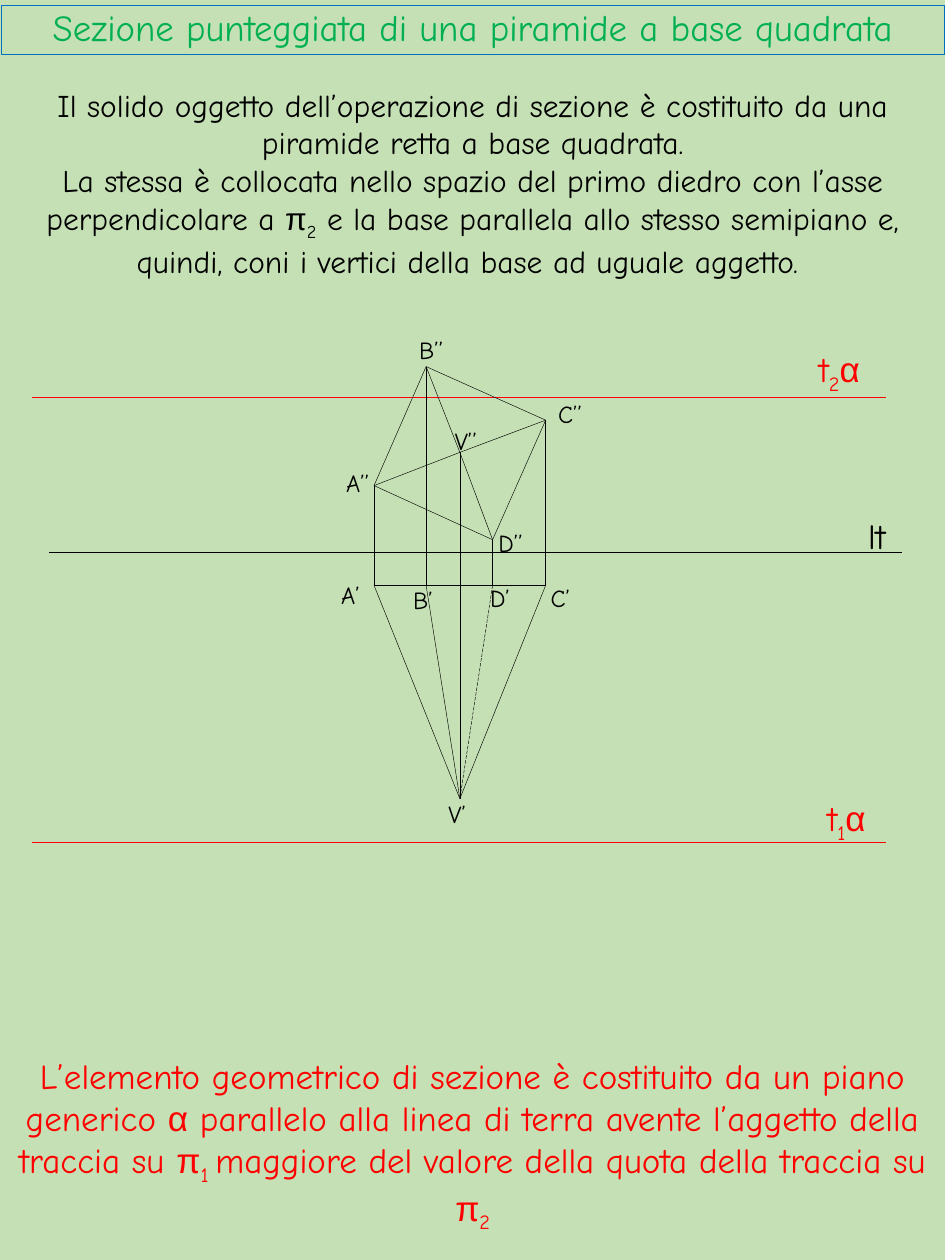
from lxml.etree import SubElement
from pptx import Presentation
from pptx.dml.color import RGBColor
from pptx.enum.dml import MSO_LINE_DASH_STYLE as Dash
from pptx.enum.shapes import MSO_CONNECTOR as Connector
from pptx.enum.text import MSO_ANCHOR as Anchor, MSO_AUTO_SIZE as AutoSize, PP_ALIGN as Align
from pptx.oxml.ns import qn
from pptx.util import Cm, Pt

BLACK = RGBColor(0x00, 0x00, 0x00)
RED = RGBColor(0xFF, 0x00, 0x00)
GREEN = RGBColor(0x00, 0xB0, 0x50)
BLUE = RGBColor(0x00, 0x70, 0xC0)
BACKGROUND = RGBColor(0xC5, 0xE0, 0xB4)
FONT, GREEK_FONT = "Comic Neue", "Arial"
HAIRLINE = Pt(0.25)

# Content: "|" separates runs, and a run that starts with "_" is a subscript
TITLE = "Sezione punteggiata di una piramide a base quadrata"
SOLID = [
    "Il solido oggetto dell’operazione di sezione è costituito da una "
    "piramide retta a base quadrata.",
    "La stessa è collocata nello spazio del primo diedro con l’asse "
    "perpendicolare a |π|_2| e la base parallela allo stesso semipiano e, "
    "quindi, coni i vertici della base ad uguale aggetto. ",
]
PLANE = [
    "L’elemento geometrico di sezione è costituito da un piano generico |α"
    "| parallelo alla linea di terra avente l’aggetto della traccia su |π|_1 |"
    "maggiore del valore della quota della traccia su |π|_2",
]

# Points of the drawing, in cm: second projections, then first projections
BASE_Y, APEX_Y = 11.8, 16.1
points = {
    "A’’": (7.54, 9.79), "B’’": (8.59, 7.39), "C’’": (11.0, 8.47),
    "D’’": (9.93, 10.88), "V’’": (9.27, 9.12),
}
for corner in "ABCDV":
    points[corner + "’"] = (points[corner + "’’"][0], APEX_Y if corner == "V" else BASE_Y)

# Label boxes: left, top, width in cm
POINT_LABELS = {
    "A’’": (6.73, 9.32, 1.3), "A’": (6.63, 11.56, 1.3),
    "B’": (8.08, 11.66, 1.0), "B’’": (8.2, 6.63, 1.3),
    "C’’": (11.0, 7.92, 1.3), "C’": (10.85, 11.63, 1.0),
    "V’": (8.79, 15.98, 1.3), "V’’": (8.92, 8.46, 1.3),
    "D’’": (9.8, 10.52, 1.3), "D’": (9.63, 11.63, 1.0),
}
# Ground line and traces of the plane: label, label box, line start, line end, colour
LINES = [
    ("lt", (17.25, 10.24, 1.45), (0.99, 11.13), (18.19, 11.13), BLACK),
    ("t|_2|α", (16.26, 6.88, 1.65), (0.64, 8.0), (17.86, 8.0), RED),
    ("t|_1|α", (16.43, 15.93, 1.65), (0.64, 16.97), (17.86, 16.97), RED),
]


def write_text(frame, paragraphs, size=14, color=BLACK, align=Align.LEFT, spacing=None):
    frame.word_wrap = True
    for index, text in enumerate(paragraphs):
        paragraph = frame.add_paragraph() if index else frame.paragraphs[0]
        paragraph.alignment = align
        paragraph.line_spacing = spacing
        for part in text.split("|"):
            run = paragraph.add_run()
            run.text = part.lstrip("_")
            run.font.size = Pt(size)
            run.font.name = GREEK_FONT if part in ("α", "π") else FONT
            run.font.color.rgb = color
            if part.startswith("_"):
                run.font._element.set("baseline", "-25000")


def add_text(slide, paragraphs, left, top, width, height, **text_format):
    box = slide.shapes.add_textbox(Cm(left), Cm(top), Cm(width), Cm(height))
    write_text(box.text_frame, paragraphs, **text_format)
    box.text_frame.auto_size = AutoSize.SHAPE_TO_FIT_TEXT


def add_line(slide, start, end, color=BLACK, dash=None):
    line = slide.shapes.add_connector(Connector.STRAIGHT, *map(Cm, start + end))
    line.line.color.rgb = color
    line.line.width = HAIRLINE
    if dash:
        line.line.dash_style = dash
    SubElement(line._element.spPr, qn("a:effectLst"))


def main():
    presentation = Presentation()
    presentation.slide_width, presentation.slide_height = Cm(19.05), Cm(25.4)
    slide = presentation.slides.add_slide(presentation.slide_layouts[5])
    slide.background.fill.solid()
    slide.background.fill.fore_color.rgb = BACKGROUND

    # Title
    title = slide.shapes.title
    title.left, title.top, title.width, title.height = Cm(0.03), Cm(0.1), Cm(19), Cm(0.99)
    title.line.color.rgb = BLUE
    title.line.width = HAIRLINE
    write_text(title.text_frame, [TITLE], size=21, color=GREEN, align=Align.CENTER, spacing=0.9)
    title.text_frame.vertical_anchor = Anchor.MIDDLE
    title.text_frame.auto_size = AutoSize.NONE

    # Ground line and traces
    for label, box, start, end, color in LINES:
        add_line(slide, start, end, color)
        add_text(slide, [label], *box, 1.11, size=20, color=color)

    # Pyramid: base sides, edges in both projections and projection lines
    for corner, following in zip("ABCD", "BCDA"):
        upper, lower = points[corner + "’’"], points[corner + "’"]
        add_line(slide, upper, points[following + "’’"])
        add_line(slide, upper, points["V’’"])
        add_line(slide, upper, lower)
        add_line(slide, lower, points["V’"], dash=Dash.LONG_DASH if corner == "D" else None)
    add_line(slide, points["V’’"], points["V’"])
    add_line(slide, points["A’"], points["C’"])
    for label, box in POINT_LABELS.items():
        add_text(slide, [label], *box, 0.85)

    # Descriptions
    add_text(slide, SOLID, 0.03, 1.6, 19, 4.11, size=18, align=Align.CENTER)
    add_text(slide, PLANE, 0.03, 21.13, 19, 3.68, size=20, color=RED, align=Align.CENTER)

    presentation.save("out.pptx")


if __name__ == "__main__":
    main()
